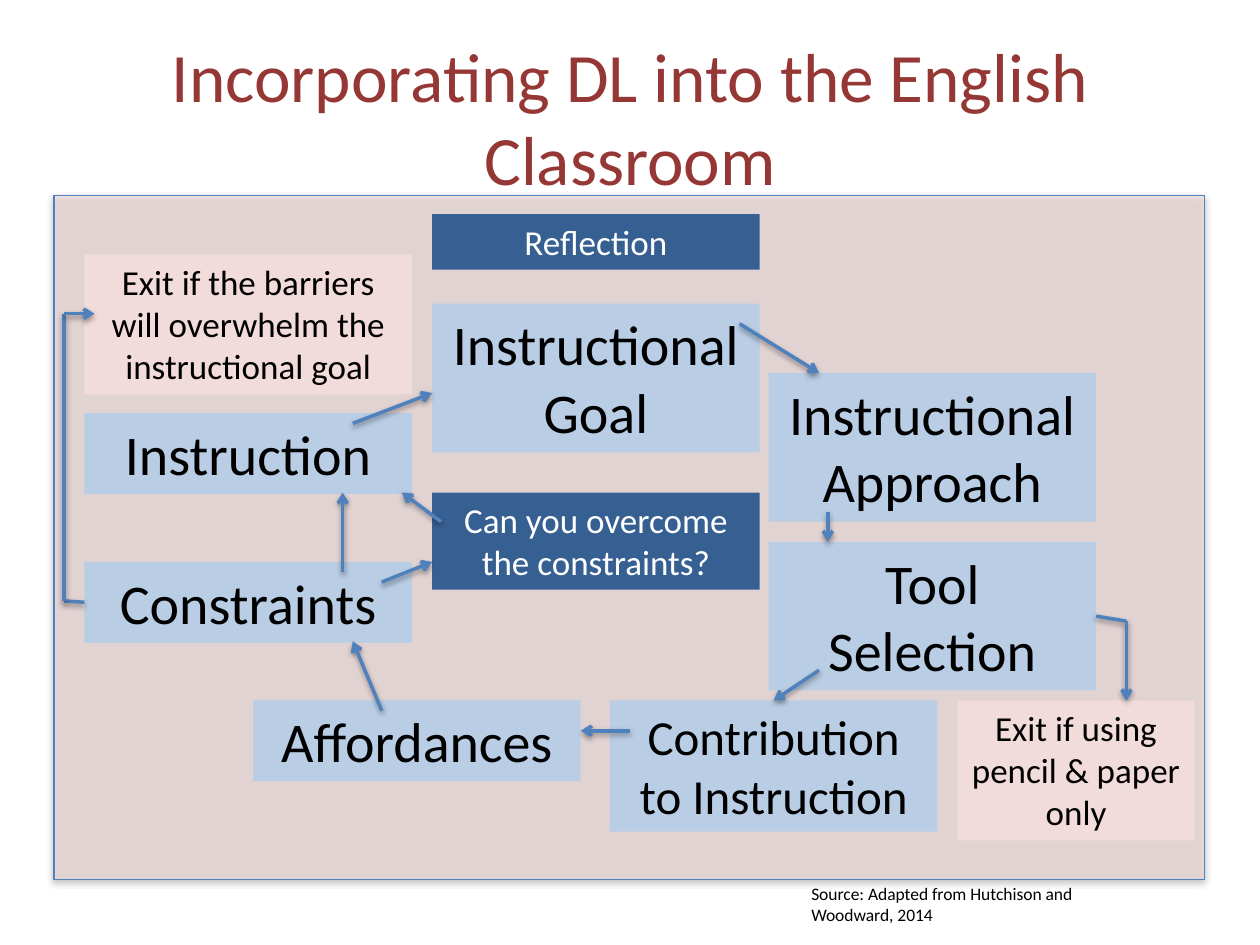
from lxml import etree
from pptx import Presentation
from pptx import util as u
from pptx.dml.color import RGBColor
from pptx.enum import shapes, text
from pptx.oxml import ns

BLUE, PINK, NAVY, LINE = "B9CDE5", "F2DCDB", "376092", "4F81BD"
BLACK, WHITE, RED = "000000", "FFFFFF", "953735"
WIDE, LEFT, MID, RIGHT, LOW = 2.6, 0.67, 3.43, 6.1, 5.56


def tint(code):
    return RGBColor.from_string(code)


def add(node, tag, **attrs):
    return etree.SubElement(node, ns.qn(tag), attrs)


class Board:
    """Draws styled elements on the current slide."""

    def __init__(self, slide, font="Calibri"):
        self.slide, self.font = slide, font

    def fill_text(self, shape, words, size, color, align, anchor):
        frame = shape.text_frame
        frame.word_wrap = True
        frame.vertical_anchor = anchor
        frame.text = words
        for para in frame.paragraphs:
            para.alignment = align
            for run in para.runs:
                run.font.name = self.font
                run.font.size = u.Pt(size)
                run.font.color.rgb = tint(color)

    def shade(self, shape, alpha, dist):
        props = shape._element.spPr
        for old in props.findall(ns.qn("a:effectLst")):
            props.remove(old)
        cast = add(add(props, "a:effectLst"), "a:outerShdw", blurRad="40000",
                   dist=str(dist), dir="5400000", rotWithShape="0")
        add(add(cast, "a:srgbClr", val=BLACK), "a:alpha", val=str(alpha * 1000))

    def rect(self, place, fill):
        shape = self.slide.shapes.add_shape(
            shapes.MSO_SHAPE.RECTANGLE, *map(u.Inches, place))
        shape.shadow.inherit = False
        shape.fill.solid()
        shape.fill.fore_color.rgb = tint(fill)
        shape.line.fill.background()
        return shape

    def panel(self, place, fill, alpha):
        shape = self.rect(place, fill)
        shape.line.color.rgb = tint(LINE)
        shape.line.width = u.Pt(0.75)
        color = shape._element.spPr.find(ns.qn("a:solidFill"))[0]
        add(color, "a:alpha", val=str(alpha * 1000))
        self.shade(shape, 35, 23000)

    def box(self, words, place, fill=BLUE, size=32, color=BLACK):
        self.fill_text(self.rect(place, fill), words, size, color,
                       text.PP_ALIGN.CENTER, text.MSO_ANCHOR.TOP)

    def label(self, words, place, size, color=BLACK,
              align=text.PP_ALIGN.LEFT, anchor=text.MSO_ANCHOR.TOP):
        shape = self.slide.shapes.add_textbox(*map(u.Inches, place))
        self.fill_text(shape, words, size, color, align, anchor)

    def link(self, start, end, arrow=True):
        line = self.slide.shapes.add_connector(
            shapes.MSO_CONNECTOR.STRAIGHT, *map(u.Inches, start + end))
        line.line.color.rgb = tint(LINE)
        line.line.width = u.Pt(2)
        if arrow:
            add(line.line._ln, "a:tailEnd", type="arrow")
        self.shade(line, 38, 20000)

    def route(self, *points):
        for start, end in zip(points, points[1:]):
            self.link(start, end, end == points[-1])


def main():
    deck = Presentation()
    deck.slide_width, deck.slide_height = u.Inches(10), u.Inches(7.5)
    board = Board(deck.slides.add_slide(deck.slide_layouts[6]))

    board.label("Incorporating DL into the English Classroom",
                (0.5, 0.3, 9, 1.25), 39.6, RED,
                text.PP_ALIGN.CENTER, text.MSO_ANCHOR.MIDDLE)
    board.label("Source: Adapted from Hutchison and Woodward, 2014",
                (6.34, 6.96, 2.52, 0.44), 10)
    board.panel((0.43, 1.55, 9.13, 5.43), PINK, 65)

    steps = [
        ("Instructional Goal", MID, 2.41, 1.18, 32),
        ("Instructional Approach", RIGHT, 2.96, 1.18, 32),
        ("Tool Selection", RIGHT, 4.3, 1.18, 32),
        ("Contribution to Instruction", 4.84, LOW, 1.04, 28),
        ("Affordances", 2.01, LOW, 0.64, 32),
        ("Constraints", LEFT, 4.46, 0.64, 32),
        ("Instruction", LEFT, 3.28, 0.64, 32),
    ]
    for words, left, top, high, size in steps:
        board.box(words, (left, top, WIDE, high), size=size)

    notes = [
        ("Exit if using pencil & paper only", (7.6, LOW, 1.88, 1.11), PINK, BLACK),
        ("Exit if the barriers will overwhelm the instructional goal",
         (LEFT, 2.02, WIDE, 1.11), PINK, BLACK),
        ("Reflection", (MID, 1.7, WIDE, 0.44), NAVY, WHITE),
        ("Can you overcome the constraints?",
         (MID, 3.91, WIDE, 0.77), NAVY, WHITE),
    ]
    for words, place, fill, color in notes:
        board.box(words, place, fill, 20, color)

    routes = [
        [(LEFT, 4.78), (0.51, 4.77), (0.51, 2.49), (0.75, 2.49)],
        [(8.7, 4.89), (8.94, 4.93), (8.94, LOW)],
        [(3.03, 4.62), (MID, 4.46)],
        [(3.5, 4.14), (3.19, 3.91)],
        [(5.87, 2.57), (6.5, 2.96)],
        [(6.57, 4.06), (6.57, 4.3)],
        [(6.5, 5.32), (6.14, LOW)],
        [(5, 5.8), (4.61, 5.8)],
        [(3.03, 5.64), (2.8, 5.09)],
        [(2.72, 4.54), (2.72, 3.91)],
        [(2.8, 3.36), (MID, 3.12)],
    ]
    for points in routes:
        board.route(*points)

    deck.save("out.pptx")


if __name__ == "__main__":
    main()
